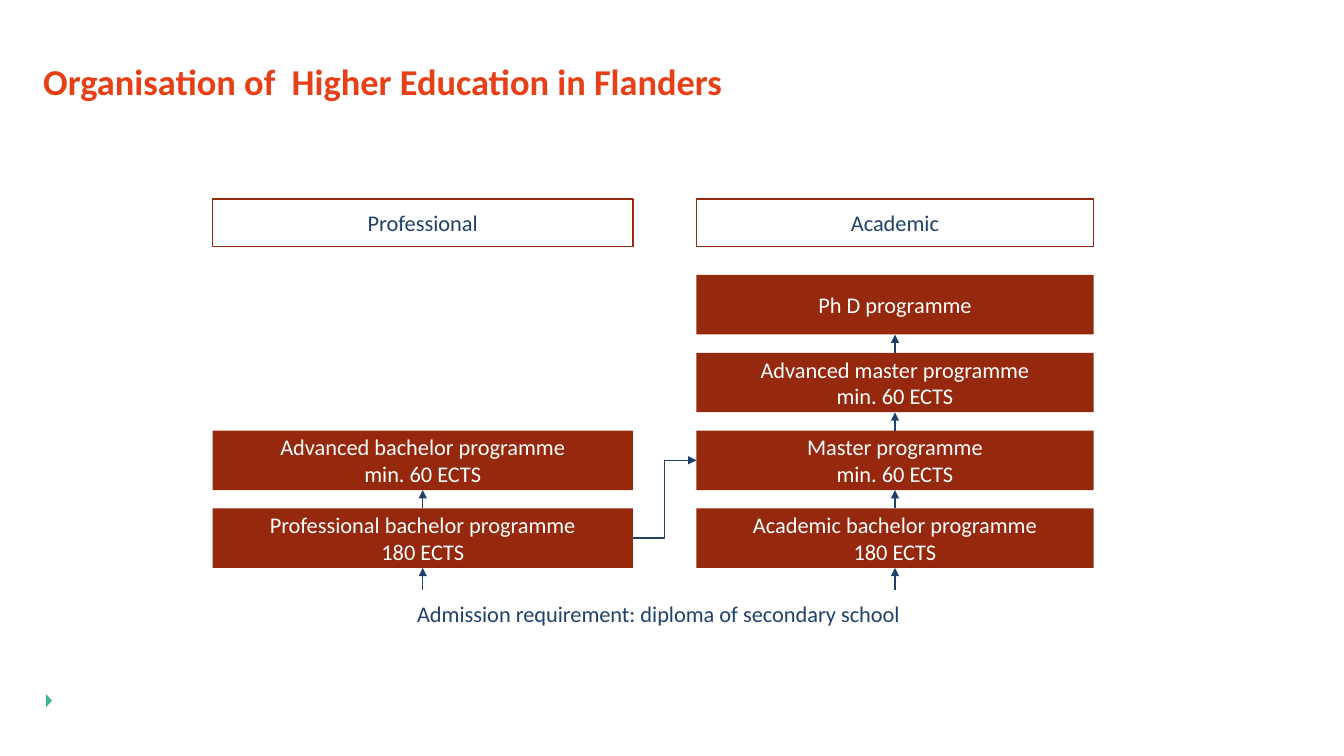
"""Build the slide on the organisation of higher education in Flanders."""
from lxml import etree
from pptx import Presentation
from pptx import util as u
from pptx.dml.color import RGBColor
from pptx.enum import shapes, text
from pptx.oxml.ns import qn

ORANGE = RGBColor(0xE7, 0x3F, 0x16)
RUST = RGBColor(0x96, 0x28, 0x0E)
NAVY = RGBColor(0x1F, 0x41, 0x6B)
GREEN = RGBColor(0x3C, 0xB4, 0x97)
WHITE = RGBColor(0xFF, 0xFF, 0xFF)

FONT = "Calibri"
TOP_LEVEL, LEVEL_STEP, BOX_HEIGHT = 6.93, 1.96, 1.5
HEADER_TOP, HEADER_HEIGHT = 5.02, 1.2
ADMISSION_TOP = 14.87
TOP, LEFT, BOTTOM, RIGHT = range(4)

COLUMNS = [
    ("Professional", 5.36, 10.59, 2, [
        ["Advanced bachelor programme", "min. 60 ECTS"],
        ["Professional bachelor programme", "180 ECTS"],
    ]),
    ("Academic", 17.55, 10.01, 0, [
        ["Ph D programme"],
        ["Advanced master programme", "min. 60 ECTS"],
        ["Master programme", "min. 60 ECTS"],
        ["Academic bachelor programme", "180 ECTS"],
    ]),
]


def add_span(para, words, size, color, bold=False):
    """Add one formatted run to a paragraph."""
    span = para.add_run()
    span.text = words
    span.font.name = FONT
    span.font.size = u.Pt(size)
    span.font.bold = bold
    span.font.color.rgb = color


def write_centred(shape, lines, color):
    """Write centred lines in the middle of a shape."""
    frame = shape.text_frame
    frame.word_wrap = False
    frame.vertical_anchor = text.MSO_ANCHOR.MIDDLE
    for index, words in enumerate(lines):
        para = frame.add_paragraph() if index else frame.paragraphs[0]
        para.alignment = text.PP_ALIGN.CENTER
        add_span(para, words, 16, color)


def add_box(page, left, top, width, height, lines, fill, color, outline=None):
    """Add a rectangle with centred text and return it."""
    box = page.shapes.add_shape(
        shapes.MSO_SHAPE.RECTANGLE, u.Cm(left), u.Cm(top), u.Cm(width), u.Cm(height))
    box.shadow.inherit = False
    box.fill.solid()
    box.fill.fore_color.rgb = fill
    if outline is None:
        box.line.fill.background()
    else:
        box.line.color.rgb = outline
        box.line.width = u.Pt(1)
    write_centred(box, lines, color)
    return box


def add_arrow(page, target, target_side, source=None, source_side=TOP,
              kind=shapes.MSO_CONNECTOR.STRAIGHT):
    """Add an arrow to a box, from another box or from the admission line."""
    x = target.left + target.width // 2
    arrow = page.shapes.add_connector(
        kind, x, u.Cm(ADMISSION_TOP), x, target.top + target.height)
    if source is not None:
        arrow.begin_connect(source, source_side)
    arrow.end_connect(target, target_side)
    arrow.line.color.rgb = NAVY
    arrow.line.width = u.Pt(1)
    etree.SubElement(arrow.line._get_or_add_ln(), qn("a:tailEnd"), type="triangle")
    etree.SubElement(arrow._element.spPr, qn("a:effectLst"))


def add_column(page, header, left, width, first_level, programmes):
    """Add a column of programmes linked upwards and return its boxes."""
    add_box(page, left, HEADER_TOP, width, HEADER_HEIGHT, [header], WHITE, NAVY, RUST)
    boxes = [
        add_box(page, left, TOP_LEVEL + level * LEVEL_STEP, width, BOX_HEIGHT,
                lines, RUST, WHITE)
        for level, lines in enumerate(programmes, first_level)
    ]
    for upper, lower in zip(boxes, boxes[1:]):
        add_arrow(page, upper, BOTTOM, lower)
    add_arrow(page, boxes[-1], BOTTOM)
    return boxes


def add_title(page, words):
    """Add the slide title."""
    box = page.shapes.add_textbox(u.Cm(1.09), u.Cm(1.7), u.Cm(29.21), u.Cm(1.9))
    frame = box.text_frame
    frame.word_wrap = True
    frame.margin_left = frame.margin_right = frame.margin_top = frame.margin_bottom = 0
    para = frame.paragraphs[0]
    para.line_spacing = 0.8
    add_span(para, words, 26, ORANGE, bold=True)


def add_marker(page):
    """Add the small triangle at the foot of the slide."""
    marker = page.shapes.add_shape(
        shapes.MSO_SHAPE.ISOSCELES_TRIANGLE, u.Cm(1.07), u.Cm(17.58), u.Cm(0.33), u.Cm(0.15))
    marker.rotation = 90
    marker.shadow.inherit = False
    marker.fill.solid()
    marker.fill.fore_color.rgb = GREEN
    marker.line.fill.background()


def main():
    """Build and save the deck."""
    deck = Presentation()
    deck.slide_width, deck.slide_height = u.Cm(33.87), u.Cm(19.05)
    page = deck.slides.add_slide(deck.slide_layouts[6])
    add_marker(page)
    add_title(page, "Organisation of  Higher Education in Flanders")
    professional, academic = [add_column(page, *column) for column in COLUMNS]
    add_arrow(page, academic[2], LEFT, professional[1], RIGHT, shapes.MSO_CONNECTOR.ELBOW)
    admission = page.shapes.add_textbox(
        u.Cm(9.45), u.Cm(ADMISSION_TOP), u.Cm(14.3), u.Cm(HEADER_HEIGHT))
    write_centred(admission, ["Admission requirement: diploma of secondary school"], NAVY)
    deck.save("out.pptx")


if __name__ == "__main__":
    main()
